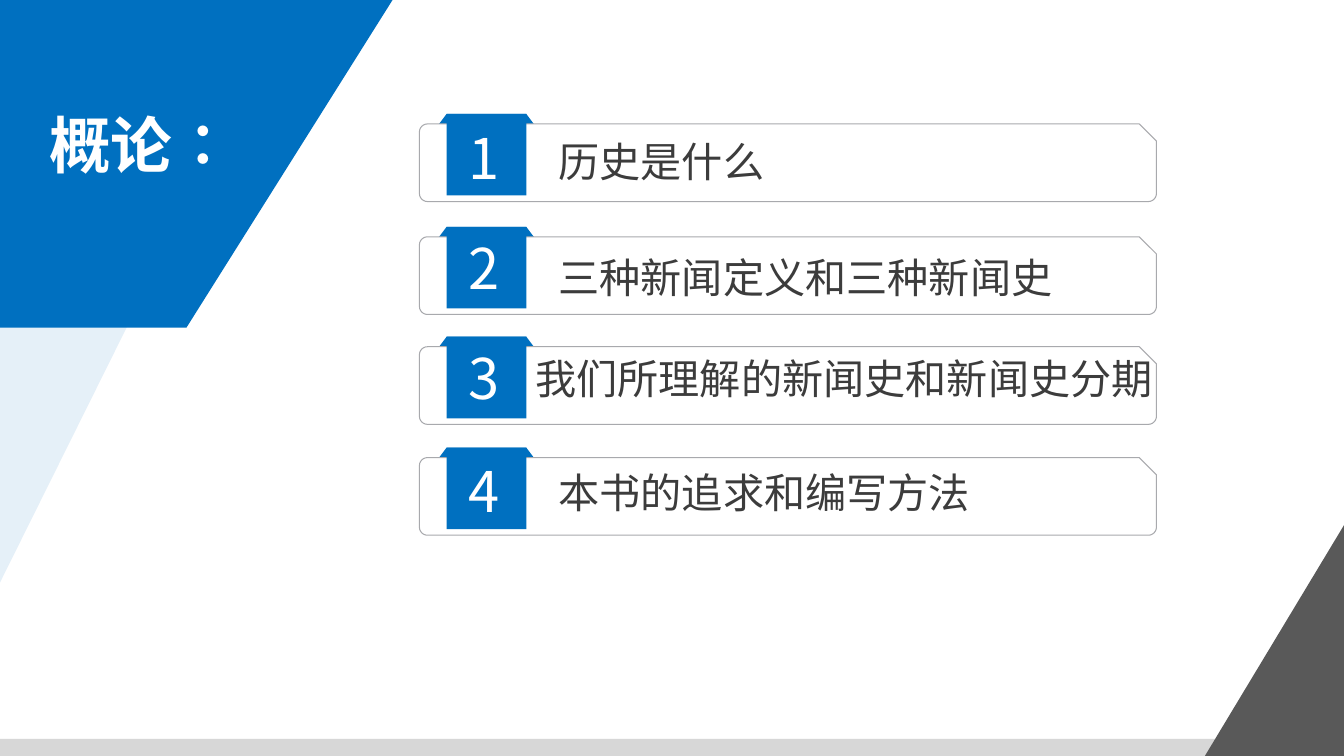
from math import cos, radians, sin

from lxml import etree
from pptx import Presentation
from pptx.dml.color import RGBColor
from pptx.enum.shapes import MSO_SHAPE
from pptx.enum.text import MSO_AUTO_SIZE
from pptx.oxml.ns import qn
from pptx.util import Inches, Pt

# Content: row top, text left, text top, number top, text width, wording
TITLE = "概论∶"
ROWS = [
    (1.13, 5.44, 1.30, 1.18, 2.28, "历史是什么"),
    (2.25, 5.44, 2.45, 2.27, 5.14, "三种新闻定义和三种新闻史"),
    (3.34, 5.21, 3.46, 3.36, 6.38, "我们所理解的新闻史和新闻史分期"),
    (4.44, 5.44, 4.59, 4.48, 4.32, "本书的追求和编写方法"),
]
COLORS = {"blue": "0070C0", "dark": "595959", "white": "FFFFFF",
          "outline": "A8A9AD", "text": "3C3C3C"}
FONT = "Noto Sans CJK SC"
TITLE_FORMAT = {"size": Pt(44), "bold": True}
NUMBER_FORMAT = {"size": Pt(40)}
ITEM_FORMAT = {"size": Pt(29.4)}

# Row geometry
BAR_LEFT, BAR_RIGHT, BAR_HEIGHT, BAR_DROP = 4.16, 11.47, 0.77, 0.1
RADIUS, SNIP = 0.08, 0.17
TAB_LEFT, TAB_WIDTH, TAB_HEIGHT = 4.43, 0.79, 0.81
FOLD, FOLD_HEIGHT = 0.09, 0.12

prs = Presentation()
prs.slide_width, prs.slide_height = Inches(13.33), Inches(7.5)
s = prs.slides.add_slide(prs.slide_layouts[6])


def paint(sp, color, alpha=None, line=None):
    sp.shadow.inherit = False
    sp.fill.solid()
    sp.fill.fore_color.rgb = RGBColor.from_string(COLORS[color])
    if alpha:
        clr = sp.fill._xPr.find(qn("a:solidFill"))[0]
        etree.SubElement(clr, qn("a:alpha"), val=str(alpha * 1000))
    if line:
        sp.line.color.rgb = RGBColor.from_string(COLORS[line])
        sp.line.width = Pt(0)
    else:
        sp.line.fill.background()


def add_polygon(points, color, **style):
    pts = [(Inches(x), Inches(y)) for x, y in points]
    fb = s.shapes.build_freeform(*pts[0], scale=1.0)
    fb.add_line_segments(pts[1:], close=True)
    paint(fb.convert_to_shape(), color, **style)


def add_rect(left, top, width, height, color, **style):
    sp = s.shapes.add_shape(MSO_SHAPE.RECTANGLE, Inches(left), Inches(top),
                            Inches(width), Inches(height))
    paint(sp, color, **style)


def add_text(text, left, top, width, height, color, formats, wrap=False):
    tb = s.shapes.add_textbox(Inches(left), Inches(top), Inches(width), Inches(height))
    tf = tb.text_frame
    tf.word_wrap = wrap
    tf.auto_size = MSO_AUTO_SIZE.SHAPE_TO_FIT_TEXT
    r = tf.paragraphs[0].add_run()
    r.text = text
    r.font.color.rgb = RGBColor.from_string(COLORS[color])
    for name, value in {"name": FONT, **formats}.items():
        setattr(r.font, name, value)
    etree.SubElement(r._r.get_or_add_rPr(), qn("a:ea"), typeface=FONT)


def corner(cx, cy, start):
    """Points of a quarter circle, clockwise from the start angle."""
    angles = [radians(start + 15 * i) for i in range(7)]
    return [(cx + RADIUS * cos(a), cy + RADIUS * sin(a)) for a in angles]


def bar_outline(top):
    bottom = top + BAR_HEIGHT
    left, right = BAR_LEFT + RADIUS, BAR_RIGHT - RADIUS
    return ([(BAR_RIGHT - SNIP, top), (BAR_RIGHT, top + SNIP)]
            + corner(right, bottom - RADIUS, 0)
            + corner(left, bottom - RADIUS, 90)
            + corner(left, top + RADIUS, 180))


# Footer strip and left-hand panels
add_rect(0, 7.33, 13.33, 0.17, "dark", alpha=24)
add_polygon([(0, 0), (2.87, 0), (0, 5.78)], "blue", alpha=10)
add_polygon([(0, -0.01), (3.9, -0.01), (1.85, 3.25), (0, 3.25)], "blue")

# Numbered rows
for number, (top, text_left, text_top, number_top, width, text) in enumerate(ROWS, 1):
    tab_right = TAB_LEFT + TAB_WIDTH
    fold_bottom = top + FOLD_HEIGHT
    add_polygon([(TAB_LEFT, top), (tab_right, top),
                 (tab_right + FOLD, fold_bottom), (TAB_LEFT - FOLD, fold_bottom)], "blue")
    add_polygon(bar_outline(top + BAR_DROP), "white", line="outline")
    add_rect(TAB_LEFT, top, TAB_WIDTH, TAB_HEIGHT, "blue")
    add_text(text, text_left, text_top, width, 0.59, "text", ITEM_FORMAT)
    add_text(str(number), 4.55, number_top, 0.48, 0.77, "white", NUMBER_FORMAT)

# Corner triangle and title
add_polygon([(13.33, 7.5), (11.95, 7.5), (13.33, 5.21)], "dark")
add_text(TITLE, 0.39, 1.01, 3.12, 1.45, "white", TITLE_FORMAT, wrap=True)

prs.save("out.pptx")
